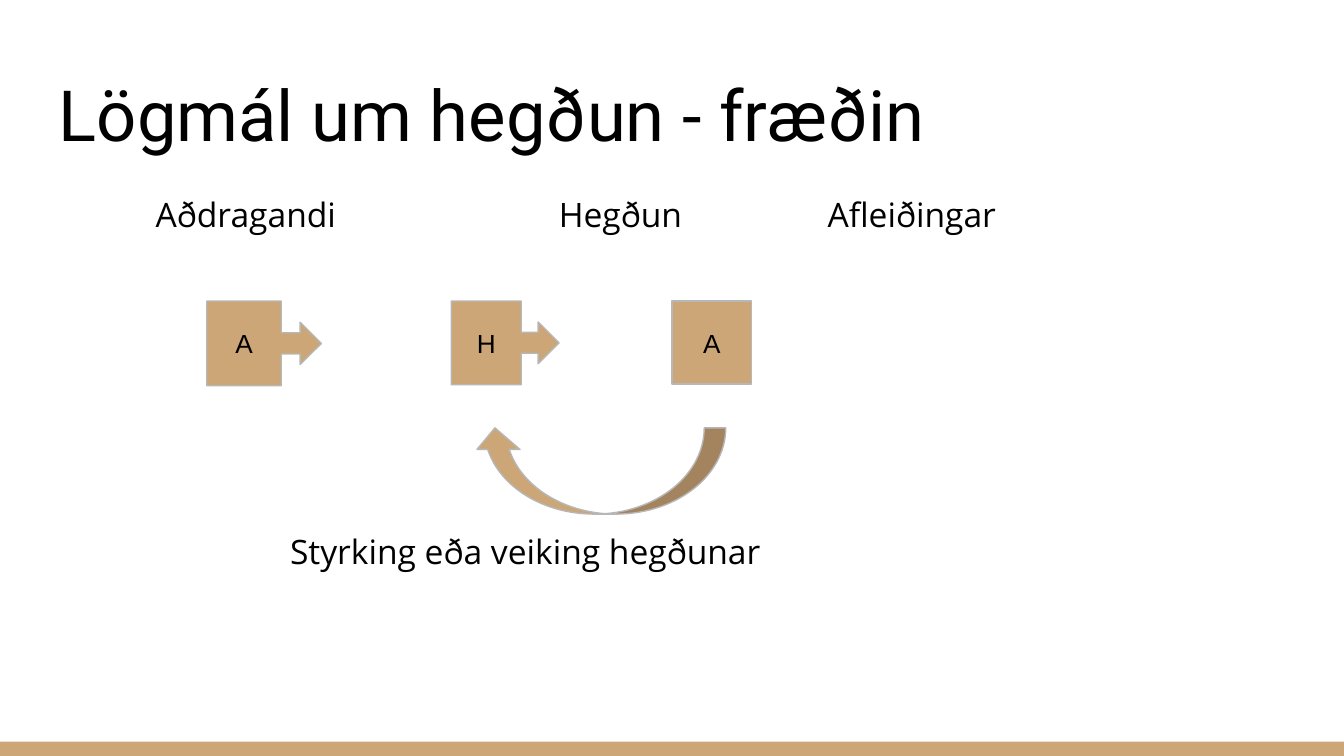
from lxml import etree
from pptx import Presentation
from pptx.dml.color import RGBColor
from pptx.enum import shapes, text
from pptx.oxml.ns import qn
from pptx.util import Pt

# Content
COLORS = {"tan": "CCA677", "edge": "B7B7B7", "ink": "000000"}
TITLE = "Lögmál um hegðun - fræðin"
HEADINGS = ["Aðdragandi", "Hegðun", "Afleiðingar"]
CAPTION = "Styrking eða veiking hegðunar"
KIND = shapes.MSO_SHAPE
STEPS = [  # letter, shape, left, width, height
    ("A", KIND.RIGHT_ARROW_CALLOUT, 110.8, 61.4, 45.4),
    ("H", KIND.RIGHT_ARROW_CALLOUT, 241.7, 57.8, 44.8),
    ("A", KIND.RECTANGLE, 360, 42.6, 44.5),
]
STEP_TOP = 161.3
CALLOUT_ADJUST = [0.25, 0.25, 0.25, 0.65]
LOOP_ADJUST = [0.25, 0.5, 0.25]
TAB_STOPS = [216, 360]
INSET = 7.2

FONTS = {
    "title": {"name": "Roboto", "size": Pt(37.8)},
    "body": {"name": "Open Sans", "size": Pt(18)},
    "step": {"name": "Arial", "size": Pt(14)},
}
HEADING_FORMAT = {"line_spacing": 1.15}
CAPTION_FORMAT = {"line_spacing": 1.15, "space_before": Pt(155.6)}


def set_attrs(obj, values):
    for name, value in values.items():
        setattr(obj, name, value)


def set_frame(sp, anchor):
    tf = sp.text_frame
    margins = {f"margin_{side}": Pt(INSET) for side in ("left", "top", "right", "bottom")}
    set_attrs(tf, {"word_wrap": True, "vertical_anchor": anchor, **margins})
    return tf


def add_run(p, words, font):
    r = p.add_run()
    r.text = words
    set_attrs(r.font, FONTS[font])
    r.font.color.rgb = RGBColor.from_string(COLORS["ink"])


def add_shape(slide, kind, box, outlined=True, adjust=()):
    sp = slide.shapes.add_shape(kind, *map(Pt, box))
    sp.shadow.inherit = False
    sp.fill.solid()
    sp.fill.fore_color.rgb = RGBColor.from_string(COLORS["tan"])
    if outlined:
        sp.line.color.rgb = RGBColor.from_string(COLORS["edge"])
        sp.line.width = Pt(0.75)
    else:
        sp.line.fill.background()
    for i, value in enumerate(adjust):
        sp.adjustments[i] = value
    return sp


prs = Presentation()
prs.slide_width, prs.slide_height = Pt(720), Pt(405)
s = prs.slides.add_slide(prs.slide_layouts[6])

# Bottom bar
add_shape(s, KIND.RECTANGLE, (0, 397.4, 720, 7.6), outlined=False)

# Title
title = s.shapes.add_textbox(Pt(24.5), Pt(25.2), Pt(671), Pt(65.5))
tf = set_frame(title, text.MSO_ANCHOR.BOTTOM)
add_run(tf.paragraphs[0], TITLE, "title")

# Headings on tab stops, with the caption below the diagram
body = s.shapes.add_textbox(Pt(76.3), Pt(93.6), Pt(671), Pt(269.3))
tf = set_frame(body, text.MSO_ANCHOR.TOP)
p = tf.paragraphs[0]
set_attrs(p, HEADING_FORMAT)
add_run(p, "\t".join(HEADINGS), "body")
tabs = etree.SubElement(p._p.get_or_add_pPr(), qn("a:tabLst"))
for stop in TAB_STOPS:
    etree.SubElement(tabs, qn("a:tab"), pos=str(Pt(stop)), algn="l")

p = tf.add_paragraph()
set_attrs(p, CAPTION_FORMAT)
p._p.get_or_add_pPr().set("marL", str(Pt(72)))
add_run(p, CAPTION, "body")

# Steps of the chain
for letter, kind, left, width, height in STEPS:
    adjust = CALLOUT_ADJUST if kind == KIND.RIGHT_ARROW_CALLOUT else ()
    sp = add_shape(s, kind, (left, STEP_TOP, width, height), adjust=adjust)
    p = set_frame(sp, text.MSO_ANCHOR.MIDDLE).paragraphs[0]
    p.alignment = text.PP_ALIGN.CENTER
    add_run(p, letter, "step")

# Feedback arrow from consequence to behaviour
loop = add_shape(s, KIND.CURVED_DOWN_ARROW, (253.6, 229.2, 135.2, 46.2), adjust=LOOP_ADJUST)
loop.rotation = 180

prs.save("out.pptx")
